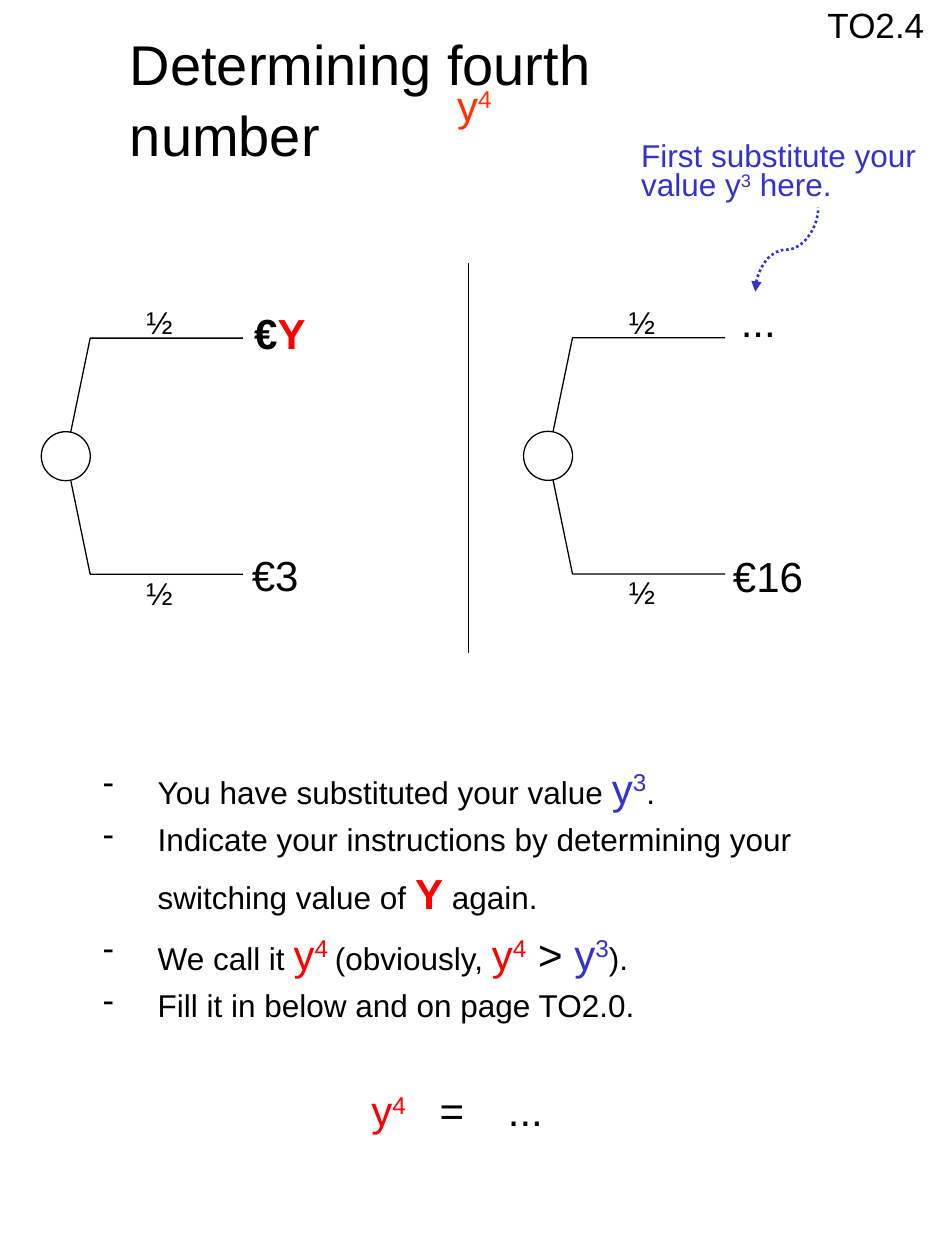
from lxml.etree import SubElement
from pptx import Presentation
from pptx.dml.color import RGBColor
from pptx.enum.dml import MSO_LINE
from pptx.enum.shapes import MSO_CONNECTOR, MSO_SHAPE
from pptx.enum.text import MSO_ANCHOR, MSO_AUTO_SIZE, PP_ALIGN
from pptx.oxml.ns import qn
from pptx.util import Pt

BLACK = RGBColor(0, 0, 0)
WHITE = RGBColor(255, 255, 255)
RED = RGBColor(255, 0, 0)
ORANGE = RGBColor(255, 0x33, 0)
BLUE = RGBColor(0x33, 0x33, 0xCC)
FONT = "Arial"


def add_run(paragraph, text, size=24, color=BLACK, bold=False, raised=False):
    run = paragraph.add_run()
    run.text = text
    run.font.name = FONT
    run.font.size = Pt(size)
    run.font.color.rgb = color
    run.font.bold = bold
    if raised:
        run.font._element.set("baseline", "30000")


def power(exponent, color):
    """Runs for y with a raised exponent."""
    return [("y", {"color": color}), (exponent, {"color": color, "raised": True})]


def write(frame, lines, spacing=None, align=PP_ALIGN.LEFT, **style):
    """Fill a text frame; each line is a list of (text, format) runs."""
    for index, runs in enumerate(lines):
        paragraph = frame.paragraphs[0] if index == 0 else frame.add_paragraph()
        paragraph.alignment = align
        if spacing:
            paragraph.line_spacing = spacing[index]
        for text, own_style in runs:
            add_run(paragraph, text, **{**style, **own_style})


def add_text(slide, box, lines, wrap=False, **style):
    shape = slide.shapes.add_textbox(*map(Pt, box))
    shape.text_frame.word_wrap = wrap
    write(shape.text_frame, lines, **style)
    return shape.text_frame


def set_line(shape, color=BLACK, width=0.75):
    shape.line.color.rgb = color
    shape.line.width = Pt(width)


def add_line(slide, kind, start, end, **style):
    connector = slide.shapes.add_connector(kind, *map(Pt, start + end))
    SubElement(connector._element.spPr, qn("a:effectLst"))
    set_line(connector, **style)
    return connector


def add_heading(slide, left, top):
    title = slide.shapes.title
    title.left, title.top, title.width, title.height = map(Pt, (left, top, 394.6, 45.4))
    frame = title.text_frame
    frame.auto_size = MSO_AUTO_SIZE.NONE
    frame.vertical_anchor = MSO_ANCHOR.TOP
    frame.word_wrap = True
    frame.margin_left, frame.margin_right, frame.margin_top = Pt(7.2), Pt(72), Pt(5)
    write(frame, [[("Determining fourth number", {})]], spacing=[1.05], size=32)
    add_text(slide, (left + 132.5, top + 31.7, 88.5, 36), [power("4", ORANGE)],
             wrap=True, align=PP_ALIGN.RIGHT)


def add_branch(slide, points):
    (x, y), *rest = [(Pt(x), Pt(y)) for x, y in points]
    builder = slide.shapes.build_freeform(x, y)
    builder.add_line_segments(rest, close=False)
    branch = builder.convert_to_shape()
    branch.shadow.inherit = False
    branch.fill.background()
    set_line(branch)


def add_tree(slide, left, middle, payoffs):
    """Chance node with two even branches; payoffs are (runs, x, y, width)."""
    radius, reach = 14, 67.5
    for side, label_top in ((-1, -91), (1, 63.7)):
        end_y = middle + side * reach
        add_branch(slide, [(left + radius, middle), (left + 28, end_y), (left + 115.2, end_y)])
        add_text(slide, (left + 53, middle + label_top, 29.5, 28.8), [[("½", {})]], size=18)
    node = slide.shapes.add_shape(
        MSO_SHAPE.OVAL, Pt(left), Pt(middle - radius), Pt(2 * radius), Pt(2 * radius))
    node.shadow.inherit = False
    node.fill.solid()
    node.fill.fore_color.rgb = WHITE
    set_line(node)
    for runs, x, y, width in payoffs:
        add_text(slide, (left + x, middle + y, width, 36), [runs])


def add_hint(slide, left, top):
    """Blue hint with a dotted curve that points down to the open payoff."""
    add_text(slide, (left, top, 171.4, 39.6),
             [[("First substitute your", {})],
              [("value y", {}), ("3", {"raised": True}), (" here.", {})]],
             spacing=[0.7, 0.8], size=18, color=BLUE)
    x, y = left + 66.2, top + 44.6
    curve = add_line(slide, MSO_CONNECTOR.CURVE, (x, y), (x + 48.2, y + 36),
                     color=BLUE, width=1.5)
    curve._element.spPr.find(qn("a:xfrm")).set("rot", str(270 * 60000))
    curve.line.dash_style = MSO_LINE.ROUND_DOT
    SubElement(curve.line._get_or_add_ln(), qn("a:headEnd"), type="triangle")


def add_instructions(slide, box):
    small = {"size": 18}
    lines = [
        [("You have substituted your value ", small), *power("3", BLUE), (".", small)],
        [("Indicate your instructions by determining your switching value of ", small),
         ("Y", {"color": RED, "bold": True}), (" again.", small)],
        [("We call it ", small), *power("4 ", RED), ("(obviously, ", small),
         *power("4", RED), (" > ", {}), *power("3", BLUE), (").", small)],
        [("Fill it in below and on page TO2.0.", small)],
    ]
    frame = add_text(slide, box, lines, wrap=True, spacing=[1.2] * len(lines))
    for paragraph in frame.paragraphs:
        properties = paragraph._p.get_or_add_pPr()
        properties.set("marL", str(Pt(31.25)))
        properties.set("indent", str(-Pt(31.25)))
        SubElement(properties, qn("a:buFontTx"))
        SubElement(properties, qn("a:buChar"), char="-")


def add_answer(slide, box):
    frame = add_text(slide, box, [[*power("4", RED), ("\t=\t...", {})]], wrap=True)
    tabs = SubElement(frame.paragraphs[0]._p.get_or_add_pPr(), qn("a:tabLst"))
    for position in (39, 78):
        SubElement(tabs, qn("a:tab"), pos=str(Pt(position)), algn="l")


def main():
    presentation = Presentation()
    presentation.slide_width, presentation.slide_height = Pt(540), Pt(720)
    slide = presentation.slides.add_slide(presentation.slide_layouts[5])

    add_heading(slide, 67, 10)
    add_text(slide, (465.8, -1.4, 69.8, 31), [[("TO2.4", {})]], size=20)
    add_tree(slide, 23.6, 260.7, [
        ([("€", {"bold": True}), ("Y", {"bold": True, "color": RED})], 114.6, -88.6, 43.9),
        ([("€3", {})], 113.2, 49.6, 41)])
    add_tree(slide, 299.2, 260.5, [
        ([("...", {})], 117, -94.9, 34.6),
        ([("€16", {})], 112.6, 50.5, 54.7)])
    add_line(slide, MSO_CONNECTOR.STRAIGHT, (267.6, 150.5), (267.6, 373))
    add_hint(slide, 359.3, 80)
    add_instructions(slide, (51.8, 426.2, 423.4, 162.7))
    add_answer(slide, (205.2, 616.3, 116, 36))
    presentation.save("out.pptx")


if __name__ == "__main__":
    main()
